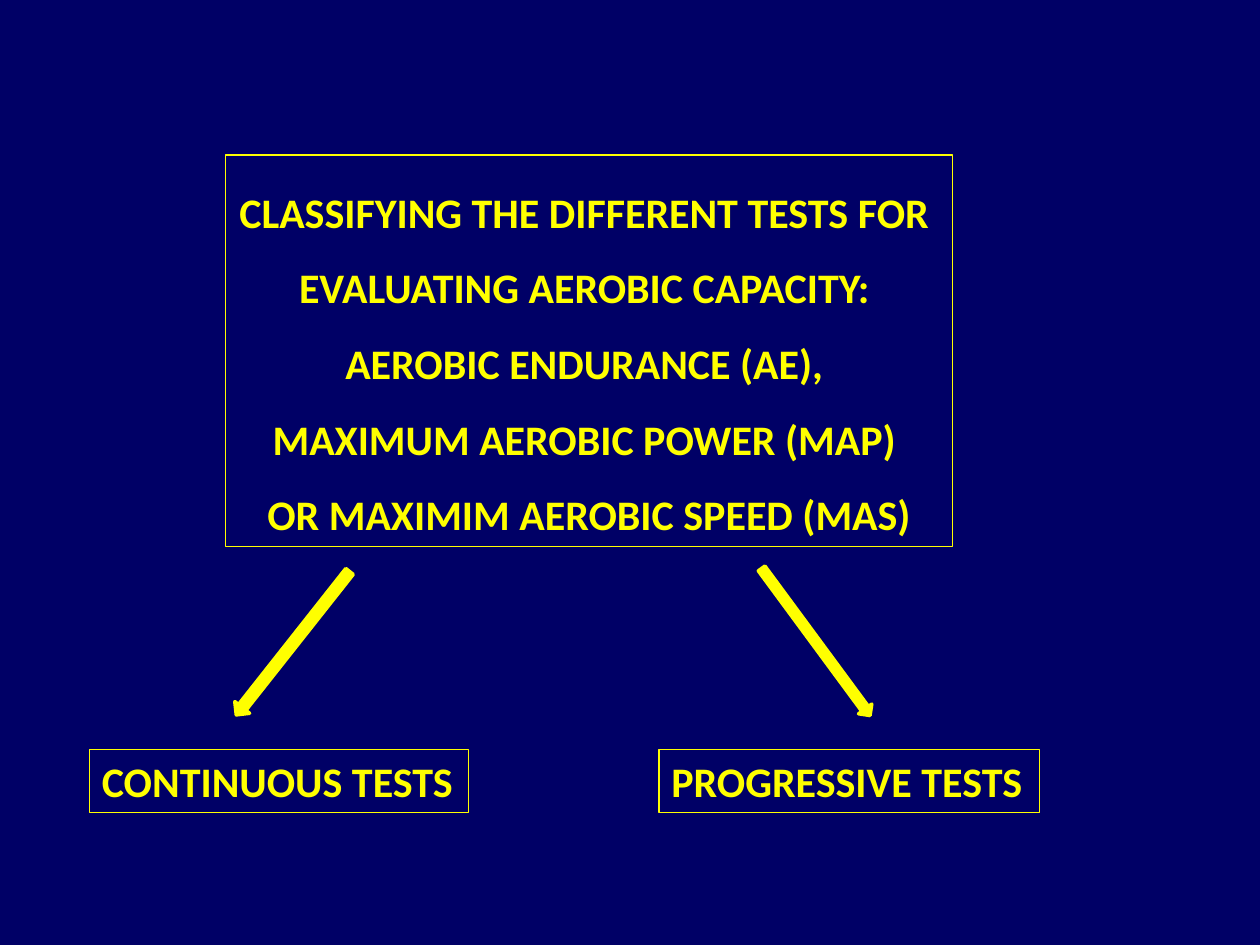
"""Build the slide that classifies aerobic capacity tests."""
from pptx import Presentation
from pptx import util as u
from pptx.dml.color import RGBColor
from pptx.enum import shapes, text

YELLOW = "FFFF00"
NAVY = "000066"


def color(value):
    return RGBColor.from_string(value)


def add_label(slide, lines, left, top, width, height, align=text.PP_ALIGN.LEFT, spacing=1.0):
    box = slide.shapes.add_textbox(u.Inches(left), u.Inches(top), u.Inches(width), u.Inches(height))
    box.line.color.rgb = color(YELLOW)
    box.line.width = u.Pt(0.75)
    frame = box.text_frame
    frame.word_wrap = False
    frame.auto_size = text.MSO_AUTO_SIZE.SHAPE_TO_FIT_TEXT
    frame.text = "\n".join(lines)
    for paragraph in frame.paragraphs:
        paragraph.alignment = align
        paragraph.line_spacing = spacing
        font = paragraph.runs[0].font
        font.name = "Calibri"
        font.size = u.Pt(24)
        font.bold = True
        font.color.rgb = color(YELLOW)


presentation = Presentation()
presentation.slide_width = u.Inches(10)
presentation.slide_height = u.Inches(7.5)
slide = presentation.slides.add_slide(presentation.slide_layouts[6])
slide.background.fill.solid()
slide.background.fill.fore_color.rgb = color(NAVY)

heading = [
    "CLASSIFYING THE DIFFERENT TESTS FOR ",
    "EVALUATING AEROBIC CAPACITY: ",
    "AEROBIC ENDURANCE (AE), ",
    "MAXIMUM AEROBIC POWER (MAP) ",
    "OR MAXIMIM AEROBIC SPEED (MAS)",
]
add_label(slide, heading, 1.79, 1.23, 5.77, 3.11, align=text.PP_ALIGN.CENTER, spacing=1.5)

for left, top, width, rotation in [(2.25, 4.38, 0.15, 38.3), (6.41, 4.37, 0.13, 323.6)]:
    arrow = slide.shapes.add_shape(
        shapes.MSO_SHAPE.DOWN_ARROW, u.Inches(left), u.Inches(top), u.Inches(width), u.Inches(1.45))
    arrow.rotation = rotation
    arrow.shadow.inherit = False
    arrow.fill.solid()
    arrow.fill.fore_color.rgb = color(YELLOW)
    arrow.line.color.rgb = color(YELLOW)
    arrow.line.width = u.Pt(2)

for name, left, width in [("CONTINUOUS TESTS", 0.71, 3.01), ("PROGRESSIVE TESTS", 5.23, 3.02)]:
    add_label(slide, [name], left, 5.95, width, 0.5)

presentation.save("out.pptx")
